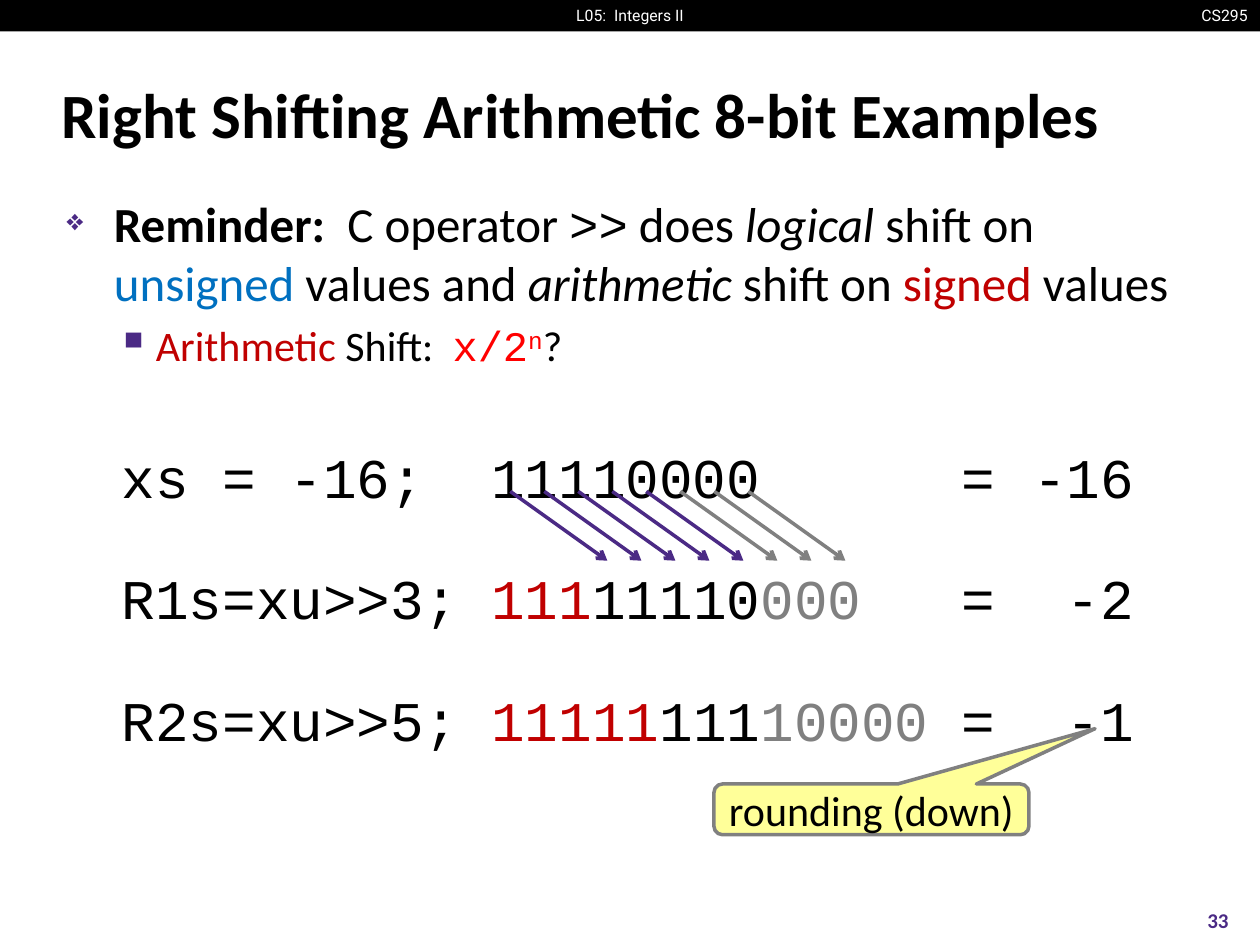
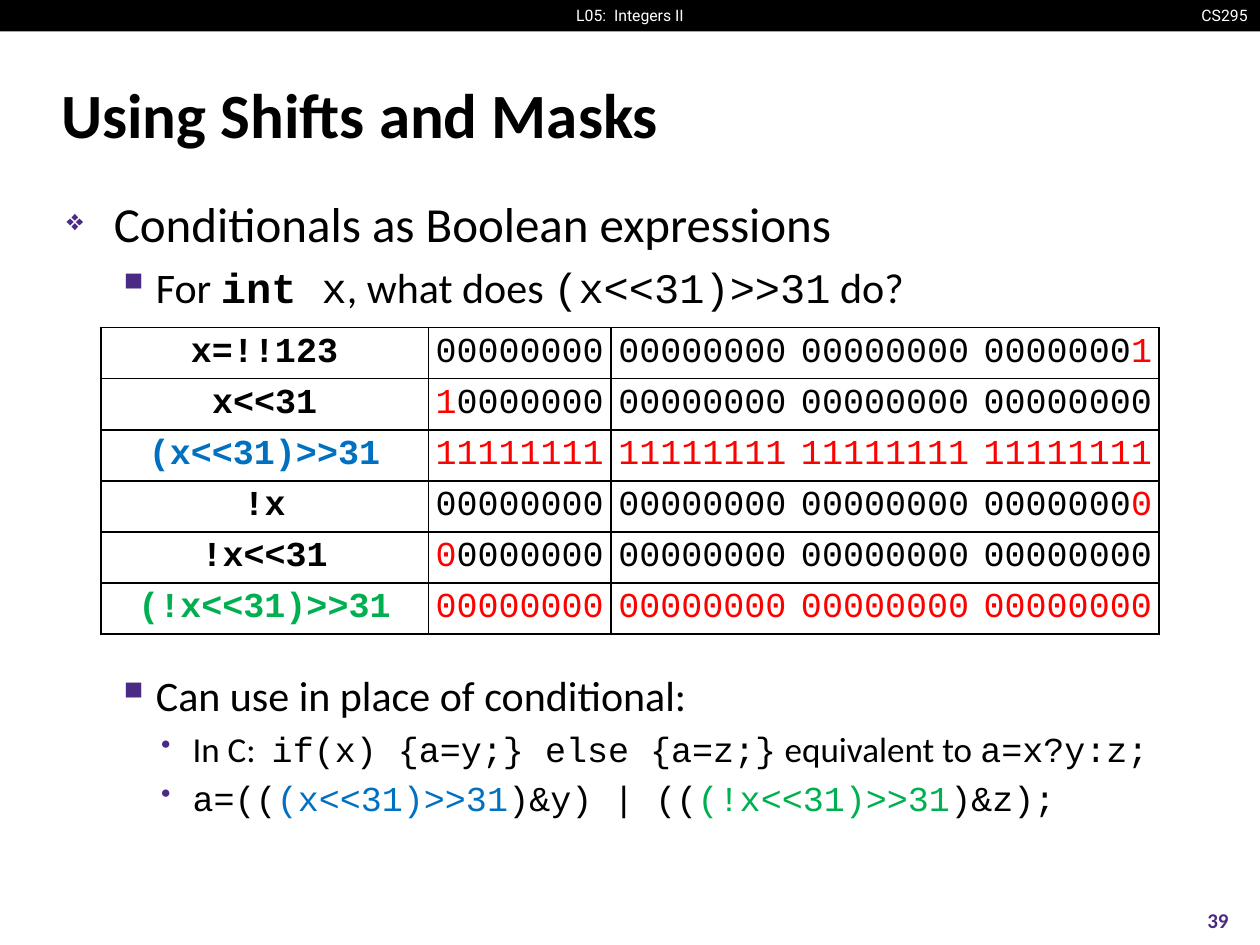
from dataclasses import dataclass
from itertools import groupby

from lxml.etree import SubElement
from pptx import Presentation
from pptx.dml.color import RGBColor
from pptx.enum.shapes import MSO_CONNECTOR, MSO_SHAPE
from pptx.enum.text import MSO_ANCHOR, PP_ALIGN
from pptx.oxml.ns import qn
from pptx.util import Pt


@dataclass(frozen=True)
class Theme:
    black: str = "000000"
    white: str = "FFFFFF"
    purple: str = "4B2A85"
    blue: str = "0070C0"
    dark_red: str = "C00000"
    red: str = "FF0000"
    green: str = "00B050"
    gray: str = "808080"
    yellow: str = "FFFF99"
    sans: str = "Calibri"
    code: str = "Courier New"
    band: str = "Roboto"
    band_size: float = 9
    number_size: float = 12
    title_size: float = 36
    code_size: float = 32
    note_size: float = 24
    table_size: float = 20
    body_sizes: tuple = (28, 24, 20)


THEME = Theme()
BULLETS = (("❖", 60, 27, -27), ("▪", 110, 51, -22.5), ("•", 80, 72, -18))
CODE_CHAR = 0.6 * THEME.code_size


@dataclass(frozen=True)
class Span:
    text: str
    color: str = THEME.black
    font: str = THEME.sans
    bold: bool = False
    italic: bool = False
    raised: bool = False


def code(text, color=THEME.black, **options):
    return Span(text, color, THEME.code, **options)


def rgb(value):
    return RGBColor.from_string(value)


def write(para, spans, size, align=PP_ALIGN.LEFT):
    para.alignment = align
    for item in spans:
        span = para.add_run()
        span.text = item.text
        span.font.size = Pt(size)
        span.font.name = item.font
        span.font.bold = item.bold
        span.font.italic = item.italic
        span.font.color.rgb = rgb(item.color)
        if item.raised:
            span._r.get_or_add_rPr().set("baseline", "30000")


def add_paragraph(frame, first):
    return frame.paragraphs[0] if first else frame.add_paragraph()


def add_text(slide, box, spans=(), size=0, align=PP_ALIGN.LEFT, anchor=MSO_ANCHOR.TOP):
    shape = slide.shapes.add_textbox(*map(Pt, box))
    frame = shape.text_frame
    frame.word_wrap = True
    frame.vertical_anchor = anchor
    write(frame.paragraphs[0], spans, size, align)
    return frame


def paint(shape, fill, line=None):
    shape.shadow.inherit = False
    shape.fill.solid()
    shape.fill.fore_color.rgb = rgb(fill)
    if line:
        shape.line.color.rgb = rgb(line)
        shape.line.width = Pt(2)
    else:
        shape.line.fill.background()


def add_band(slide, box):
    left, top, width, height = box
    paint(slide.shapes.add_shape(MSO_SHAPE.RECTANGLE, *map(Pt, box)), THEME.black)
    labels = (("CS295", left + width - 42.5, 42.5, PP_ALIGN.RIGHT),
              ("L05:  Integers II", left + width / 2 - 39, 78, PP_ALIGN.CENTER))
    for text, x, label_width, align in labels:
        frame = add_text(slide, (x, top, label_width, height),
                         [Span(text, THEME.white, THEME.band)], THEME.band_size, align)
        frame.word_wrap = False


def add_frame(deck, title, number):
    slide = deck.slides.add_slide(deck.slide_layouts[6])
    add_band(slide, (0, 0, 720, 18))
    add_text(slide, (28, 34.5, 662, 60), [Span(title, bold=True)],
             THEME.title_size, anchor=MSO_ANCHOR.MIDDLE)
    add_text(slide, (672, 511, 48, 29), [Span(number, THEME.purple, bold=True)],
             THEME.number_size, PP_ALIGN.CENTER, MSO_ANCHOR.MIDDLE)
    return slide


def add_bullet(para, level):
    symbol, percent, margin, indent = BULLETS[level]
    props = para._p.get_or_add_pPr()
    props.set("marL", str(Pt(margin)))
    props.set("indent", str(Pt(indent)))
    color = SubElement(props, qn("a:buClr"))
    SubElement(color, qn("a:srgbClr"), val=THEME.purple)
    SubElement(props, qn("a:buSzPct"), val=str(percent * 1000))
    SubElement(props, qn("a:buChar"), char=symbol)


def add_body(slide, box, items):
    frame = add_text(slide, box)
    for index, (level, gap, spans) in enumerate(items):
        para = add_paragraph(frame, index == 0)
        size = THEME.body_sizes[level]
        para.level = level
        para.space_before = Pt(gap + 0.2 * size if index else 0)
        write(para, spans, size)
        add_bullet(para, level)


def add_code_column(slide, box, rows, align, tabs=()):
    frame = add_text(slide, box)
    frame.margin_top = Pt(8)
    for index, spans in enumerate(rows):
        para = add_paragraph(frame, index == 0)
        para.space_before = Pt(31 if index else 0)
        write(para, spans, THEME.code_size, align)
        if tabs:
            stops = SubElement(para._p.get_or_add_pPr(), qn("a:tabLst"))
            for column in tabs:
                SubElement(stops, qn("a:tab"), pos=str(Pt(column * CODE_CHAR)), algn="l")
    return frame


def add_shift_code(slide, box):
    left, top, width, height = box
    shifts = (("xs = -16;", "", "11110000", ""),
              ("R1s=xu>>3;", "111", "11110", "000"),
              ("R2s=xu>>5;", "11111", "111", "10000"))
    rows = []
    for statement, filled, kept, dropped in shifts:
        bits = ((filled, THEME.dark_red), (kept, THEME.black), (dropped, THEME.gray))
        rows.append([code(statement + "\t"),
                     *(code(text, color) for text, color in bits if text),
                     code("\t=")])
    frame = add_code_column(slide, (left, top, 518, height), rows, PP_ALIGN.LEFT, (11, 25))
    frame.margin_left = Pt(12)
    frame.margin_right = 0
    values = [[code(value)] for value in ("-16", "-2", "-1")]
    add_code_column(slide, (left + width - 86, top, 86, height), values, PP_ALIGN.RIGHT)


def add_shift_arrows(slide, box):
    left, top, width, height = box
    count, reach = 8, 55.5
    step = (width - reach) / (count - 1)
    for index in range(count):
        start = left + index * step
        arrow = slide.shapes.add_connector(
            MSO_CONNECTOR.STRAIGHT, Pt(start), Pt(top), Pt(start + reach), Pt(top + height))
        arrow.line.color.rgb = rgb(THEME.purple if index < 5 else THEME.gray)
        arrow.line.width = Pt(2)
        SubElement(arrow.line._get_or_add_ln(), qn("a:tailEnd"), type="arrow")
        SubElement(arrow._element.spPr, qn("a:effectLst"))


def add_callout(slide, box, text):
    callout = slide.shapes.add_shape(MSO_SHAPE.ROUNDED_RECTANGULAR_CALLOUT, *map(Pt, box))
    for index, value in enumerate((0.71, -1.59, 0.17)):
        callout.adjustments[index] = value
    paint(callout, THEME.yellow, THEME.gray)
    frame = callout.text_frame
    frame.word_wrap = False
    frame.vertical_anchor = MSO_ANCHOR.MIDDLE
    write(frame.paragraphs[0], [Span(text)], THEME.note_size, PP_ALIGN.CENTER)


def set_borders(cell, visible):
    props = cell._tc.get_or_add_tcPr()
    for side in "LRTB":
        line = SubElement(props, qn(f"a:ln{side}"), w=str(Pt(1)))
        if side in visible:
            fill = SubElement(line, qn("a:solidFill"))
            SubElement(fill, qn("a:srgbClr"), val=THEME.black)
        else:
            SubElement(line, qn("a:noFill"))


def byte_spans(bits, marked, first):
    positions = range(first, first + 8)
    return [code("".join(bits[place] for place in group), THEME.red if hot else THEME.black)
            for hot, group in groupby(positions, lambda place: place in marked)]


def add_mask_table(slide, box):
    zeros, every, lowest, highest = "0" * 32, range(32), (31,), (0,)
    rows = (("x=!!123", THEME.black, zeros[1:] + "1", lowest),
            ("x<<31", THEME.black, "1" + zeros[1:], highest),
            ("(x<<31)>>31", THEME.blue, "1" * 32, every),
            ("!x", THEME.black, zeros, lowest),
            ("!x<<31", THEME.black, zeros, highest),
            ("(!x<<31)>>31", THEME.green, zeros, every))
    borders = ("LRTB", "LRTB", "LTB", "TB", "RTB")
    table = slide.shapes.add_table(len(rows), len(borders), *map(Pt, box)).table
    label_width = 187.2
    for index, column in enumerate(table.columns):
        column.width = Pt((box[2] - label_width) / 4 if index else label_width)
    for row_index, (label, color, bits, marked) in enumerate(rows):
        table.rows[row_index].height = Pt(box[3] / len(rows))
        cells = [[code(label, color, bold=True)]]
        cells += [byte_spans(bits, marked, first) for first in range(0, 32, 8)]
        for column_index, spans in enumerate(cells):
            cell = table.cell(row_index, column_index)
            cell.margin_left = cell.margin_right = Pt(0 if column_index else 7.2)
            cell.margin_top = cell.margin_bottom = 0
            cell.vertical_anchor = MSO_ANCHOR.MIDDLE
            set_borders(cell, borders[column_index])
            cell.fill.background()
            write(cell.text_frame.paragraphs[0], spans, THEME.table_size, PP_ALIGN.CENTER)


BODY_BOX = (31, 107.3, 659, 391.7)


def build_shift_slide(deck):
    slide = add_frame(deck, "Right Shifting Arithmetic 8-bit Examples", "33")
    add_body(slide, BODY_BOX, (
        (0, 0, [Span("Reminder:", bold=True), Span("  C operator "), code(">>"),
                Span(" does "), Span("logical", italic=True), Span(" shift on "),
                Span("unsigned", THEME.blue), Span(" values and "),
                Span("arithmetic ", italic=True), Span("shift on "),
                Span("signed", THEME.dark_red), Span(" values")]),
        (1, 0, [Span("Arithmetic ", THEME.dark_red), Span("Shift:  "),
                code("x/2", THEME.red), code("n", THEME.red, raised=True), Span("?")])))
    add_shift_code(slide, (57.6, 244.8, 597.6, 181.4))
    add_shift_arrows(slide, (291.6, 280.8, 191.5, 39.6))
    add_callout(slide, (408, 448, 180, 29), "rounding (down)")


def build_mask_slide(deck):
    slide = add_frame(deck, "Using Shifts and Masks", "39")
    add_body(slide, BODY_BOX, (
        (0, 0, [Span("Conditionals as Boolean expressions")]),
        (1, 0, [Span("For "), code("int", bold=True), code(" x"),
                Span(", what does "), code("(x<<31)>>31"), Span(" do?")]),
        (1, 200, [Span("Can use in place of conditional:")]),
        (2, 0, [Span("In C:  "), code("if(x) {a=y;} else {a=z;}"),
                Span(" equivalent to "), code("a=x?y:z;")]),
        (2, 0, [code("a=(("), code("(x<<31)>>31", THEME.blue), code(")&y) | (("),
                code("(!x<<31)>>31", THEME.green), code(")&z);")])))
    add_mask_table(slide, (57.6, 187.2, 604.8, 175.2))


def main():
    deck = Presentation()
    deck.slide_width, deck.slide_height = Pt(720), Pt(540)
    build_shift_slide(deck)
    build_mask_slide(deck)
    deck.save("out.pptx")


if __name__ == "__main__":
    main()
